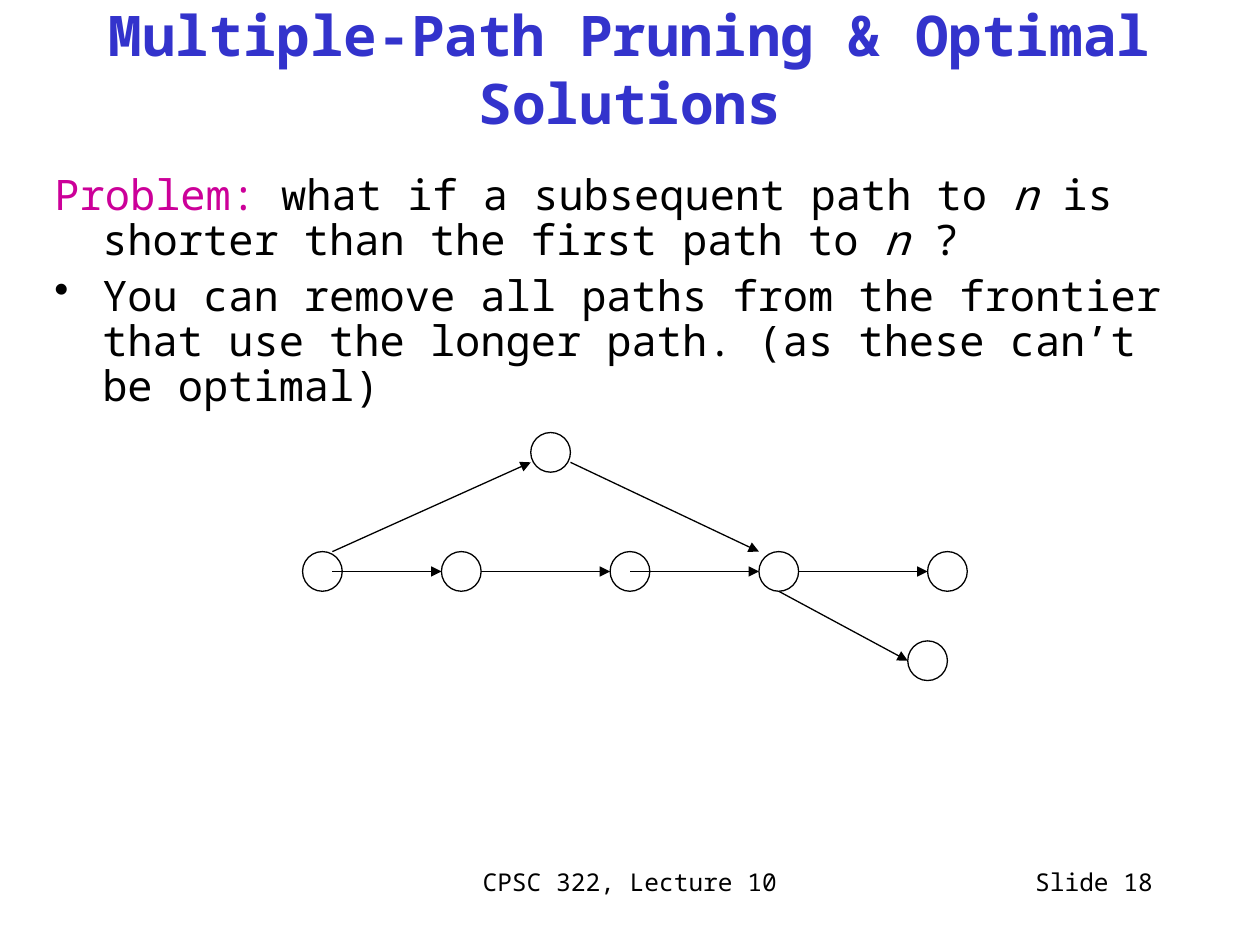
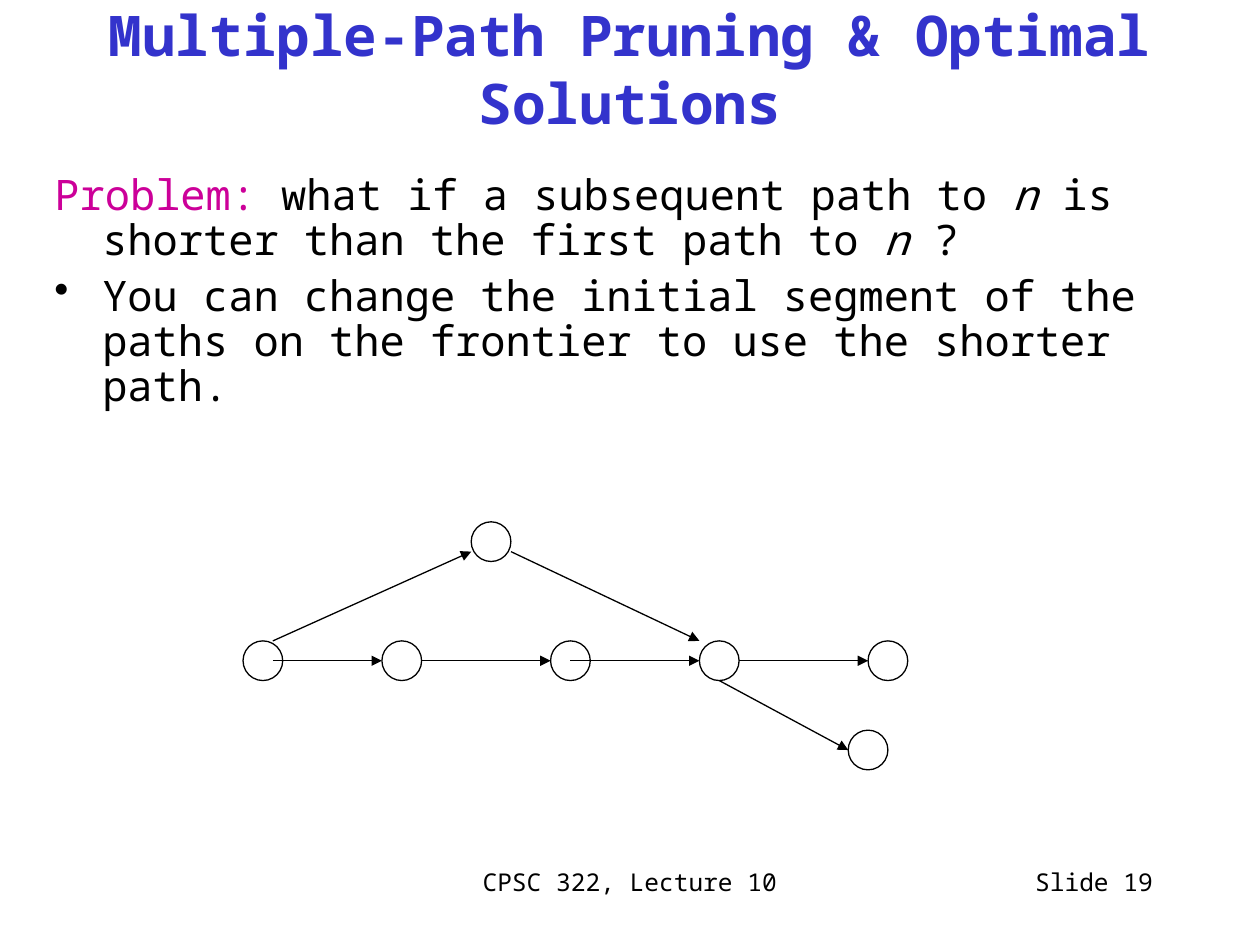
import dataclasses
import typing

import lxml.etree
import pptx
import pptx.dml.color
import pptx.enum.shapes
import pptx.enum.text
import pptx.oxml.ns
import pptx.util

WIDE = pptx.util.Inches(10)
HIGH = pptx.util.Inches(7.5)
CELL = WIDE / 120
STEP = WIDE / 127
FONT = "Noto Sans Mono"
HUES = {"ink": "000000", "title": "3333CC", "label": "CC0099"}
ALIGN = pptx.enum.text.PP_ALIGN
HEAD = "Multiple-Path Pruning & Optimal Solutions"
COURSE = "CPSC 322, Lecture 10"
SIZE = 4
NODES = [(0, 0), (14, 0), (31, 0), (46, 0), (23, -12), (63, 0), (61, 9)]
EDGES = [
    (3, 0, 23, -9), (27, -9, 46, 0), (3, 2, 14, 2), (18, 2, 31, 2),
    (33, 2, 46, 2), (50, 2, 63, 2), (48, 4, 61, 11),
]


@dataclasses.dataclass
class Frame:
    col: float
    row: float
    cols: float
    rows: float

    def box(self) -> list[int]:
        return [round(n * CELL) for n in (self.col, self.row, self.cols, self.rows)]


@dataclasses.dataclass
class Part:
    text: str
    hue: str = "ink"
    slant: bool = False


@dataclasses.dataclass
class Page:
    number: int
    answer: str
    rows: int
    left: float
    top: float


TITLE = Frame(4, 2, 112, 9)
FOOT = Frame(41, 82, 38, 6)
COUNT = Frame(86, 82, 25, 6)
ASK = [
    Part("Problem:", "label"),
    Part(" what if a subsequent path to "),
    Part("n", slant=True),
    Part(" is shorter than the first path to "),
    Part("n ", slant=True),
    Part("?"),
]
PAGES = [
    Page(18, "You can remove all paths from the frontier that use the longer path. "
         "(as these can’t be optimal)", 24, 30.5, 55.6),
    Page(19, "You can change the initial segment of the paths on the frontier "
         "to use the shorter path.", 59, 24.5, 64.6),
]


def tint(name: str) -> pptx.dml.color.RGBColor:
    return pptx.dml.color.RGBColor.from_string(HUES[name])


def style(font: typing.Any, size: float, hue: str = "ink",
          bold: bool = False, slant: bool = False) -> None:
    font.name = FONT
    font.size = pptx.util.Pt(size)
    font.bold = bold
    font.italic = slant
    font.color.rgb = tint(hue)


def child(node: typing.Any, tag: str, **attrs: str) -> typing.Any:
    return lxml.etree.SubElement(node, pptx.oxml.ns.qn(tag), attrs)


def add_title(slide: typing.Any) -> None:
    shape = slide.shapes.title
    shape.left, shape.top, shape.width, shape.height = TITLE.box()
    frame = shape.text_frame
    frame.text = HEAD
    frame.word_wrap = True
    frame.auto_size = pptx.enum.text.MSO_AUTO_SIZE.NONE
    frame.vertical_anchor = pptx.enum.text.MSO_ANCHOR.MIDDLE
    line = frame.paragraphs[0]
    line.alignment = ALIGN.CENTER
    style(line.runs[0].font, 32, "title", bold=True)


def add_box(slide: typing.Any, place: Frame) -> typing.Any:
    frame = slide.shapes.add_textbox(*place.box()).text_frame
    frame.word_wrap = True
    return frame


def add_note(slide: typing.Any, place: Frame, text: str, align: ALIGN) -> None:
    frame = add_box(slide, place)
    frame.text = text
    line = frame.paragraphs[0]
    line.alignment = align
    style(line.runs[0].font, 14)


def fill_line(line: typing.Any, parts: list[Part], mark: str = "") -> None:
    line.line_spacing = 0.9
    props = line._p.get_or_add_pPr()
    hang = pptx.util.Inches(0.38)
    props.set("marL", str(hang))
    props.set("indent", str(-hang))
    if mark:
        line.space_before = pptx.util.Pt(5.7)
        child(props, "a:buChar", char=mark)
    else:
        child(props, "a:buNone")
    for part in parts:
        run = line.add_run()
        run.text = part.text
        style(run.font, 24, part.hue, slant=part.slant)


def add_body(slide: typing.Any, page: Page) -> None:
    frame = add_box(slide, Frame(4, 16, 111, page.rows))
    fill_line(frame.paragraphs[0], ASK)
    fill_line(frame.add_paragraph(), [Part(page.answer)], "•")


def ink_line(line: typing.Any) -> None:
    line.color.rgb = tint("ink")
    line.width = pptx.util.Pt(0.75)


def add_graph(slide: typing.Any, page: Page) -> None:
    def spot(col: float, row: float) -> tuple[int, int]:
        return round((page.left + col) * STEP), round((page.top + row) * STEP)

    side = round(SIZE * STEP)
    for col, row in NODES:
        node = slide.shapes.add_shape(
            pptx.enum.shapes.MSO_SHAPE.OVAL, *spot(col, row), side, side)
        node.shadow.inherit = False
        node.fill.background()
        ink_line(node.line)
    for col, row, end, stop in EDGES:
        edge = slide.shapes.add_connector(
            pptx.enum.shapes.MSO_CONNECTOR.STRAIGHT, *spot(col, row), *spot(end, stop))
        ink_line(edge.line)
        child(edge.line._get_or_add_ln(), "a:tailEnd", type="triangle")
        child(edge._element.spPr, "a:effectLst")


def main() -> None:
    deck = pptx.Presentation()
    deck.slide_width, deck.slide_height = WIDE, HIGH
    for page in PAGES:
        slide = deck.slides.add_slide(deck.slide_layouts[5])
        add_note(slide, FOOT, COURSE, ALIGN.CENTER)
        add_note(slide, COUNT, f"Slide {page.number}", ALIGN.RIGHT)
        add_title(slide)
        add_body(slide, page)
        add_graph(slide, page)
    deck.save("out.pptx")


if __name__ == "__main__":
    main()
